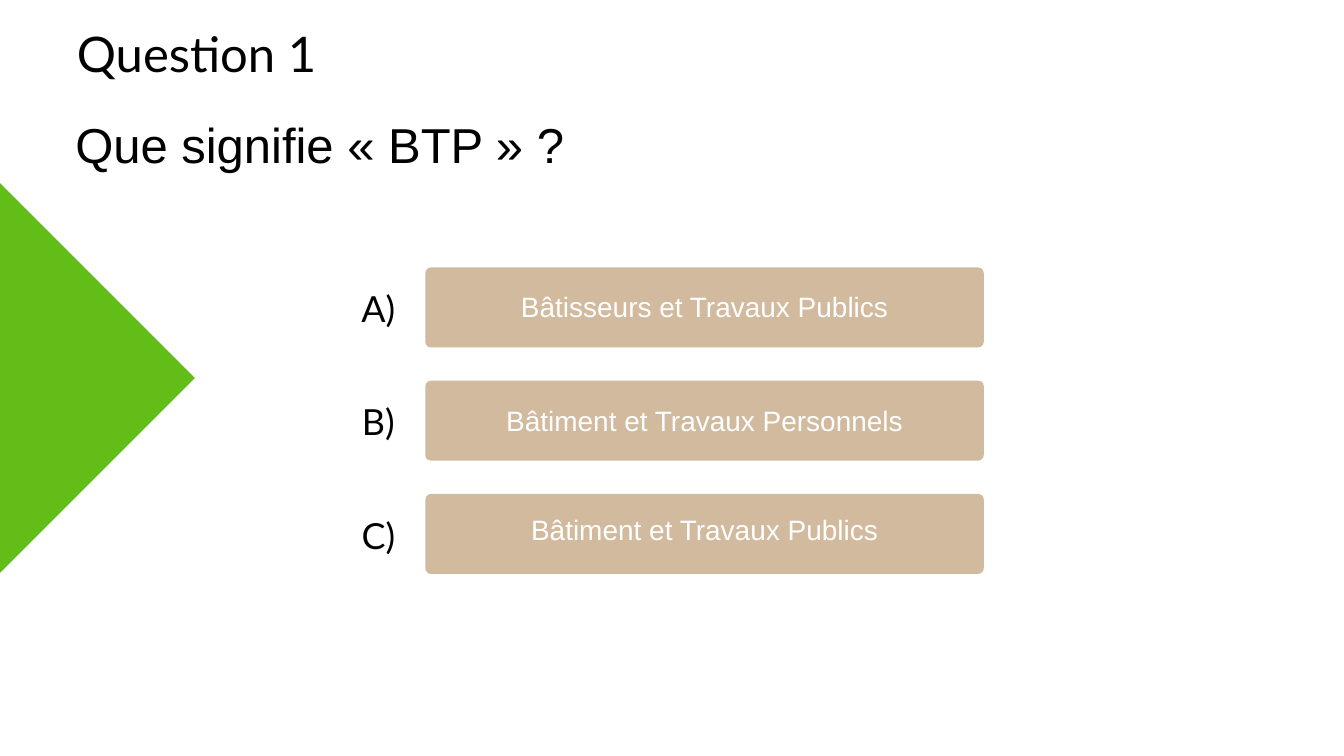
from dataclasses import dataclass

from pptx import Presentation
from pptx.dml.color import RGBColor
from pptx.enum.shapes import MSO_SHAPE
from pptx.enum.text import PP_ALIGN
from pptx.util import Emu, Pt

PX = 4572  # 200 px to the inch
LEFT, CENTER = PP_ALIGN.LEFT, PP_ALIGN.CENTER
DIAMOND, ROUNDED = MSO_SHAPE.DIAMOND, MSO_SHAPE.ROUNDED_RECTANGLE


@dataclass(frozen=True)
class TextStyle:
    font: str
    size: float
    leading: float
    color: str


@dataclass(frozen=True)
class Theme:
    green: str = "62BD19"
    sand: str = "D1BA9D"
    title: TextStyle = TextStyle("Lato", 52.5, 73.5, "000000")
    question: TextStyle = TextStyle("Arial", 52.5, 57.2, "000000")
    letter: TextStyle = TextStyle("Lato", 38.5, 53.9, "000000")
    answer: TextStyle = TextStyle("Arial", 30, 32.7, "FFFFFF")


THEME = Theme()

# Each answer: letter, wording, distance from the button's top to its text
ANSWERS = [
    ("A)", "Bâtisseurs et Travaux Publics", 76),
    ("B)", "Bâtiment et Travaux Personnels", 76),
    ("C)", "Bâtiment et Travaux Publics", 64),
]


def emu(*lengths):
    return [Emu(n * PX) for n in lengths]


def add_filled(s, kind, box, color):
    sp = s.shapes.add_shape(kind, *emu(*box))
    sp.shadow.inherit = False
    sp.fill.solid()
    sp.fill.fore_color.rgb = RGBColor.from_string(color)
    sp.line.fill.background()
    return sp


def add_text(s, text, box, style, align=CENTER):
    tf = s.shapes.add_textbox(*emu(*box)).text_frame
    tf.word_wrap = True
    tf.margin_left = tf.margin_top = tf.margin_right = tf.margin_bottom = 0
    tf.text = text
    p = tf.paragraphs[0]
    p.alignment = align
    p.line_spacing = Pt(style.leading)
    font = p.runs[0].font
    font.name, font.size = style.font, Pt(style.size)
    font.color.rgb = RGBColor.from_string(style.color)


def add_heading(s, box):
    x, y, w, h = box
    add_text(s, "Question 1", (x, y, 722, 218), THEME.title)
    add_text(s, "Que signifie « BTP » ?", (x, y + h - 184, w, 184), THEME.question, LEFT)


def add_answers(s, box):
    """Stack the lettered answer buttons evenly from the top to the bottom of box."""
    x, y, w, h = box
    letter_w, button_x, button_h = 112, 196, 238
    pitch = (h - button_h) // (len(ANSWERS) - 1)
    for i, (letter, answer, text_top) in enumerate(ANSWERS):
        top = y + i * pitch
        button = add_filled(s, ROUNDED, (x + button_x, top, w - button_x, button_h), THEME.sand)
        button.adjustments[0] = 0.07
        add_text(s, letter, (x, top + 36, letter_w, 160), THEME.letter)
        add_text(s, answer, (x + button_x, top + text_top, w - button_x, 104), THEME.answer)


def main():
    prs = Presentation()
    prs.slide_width, prs.slide_height = emu(4000, 2250)
    s = prs.slides.add_slide(prs.slide_layouts[6])
    add_filled(s, DIAMOND, (-586, 542, 1166, 1166), THEME.green)
    add_heading(s, (224, 40, 1478, 502))
    add_answers(s, (1070, 796, 1858, 912))
    prs.save("out.pptx")


if __name__ == "__main__":
    main()
